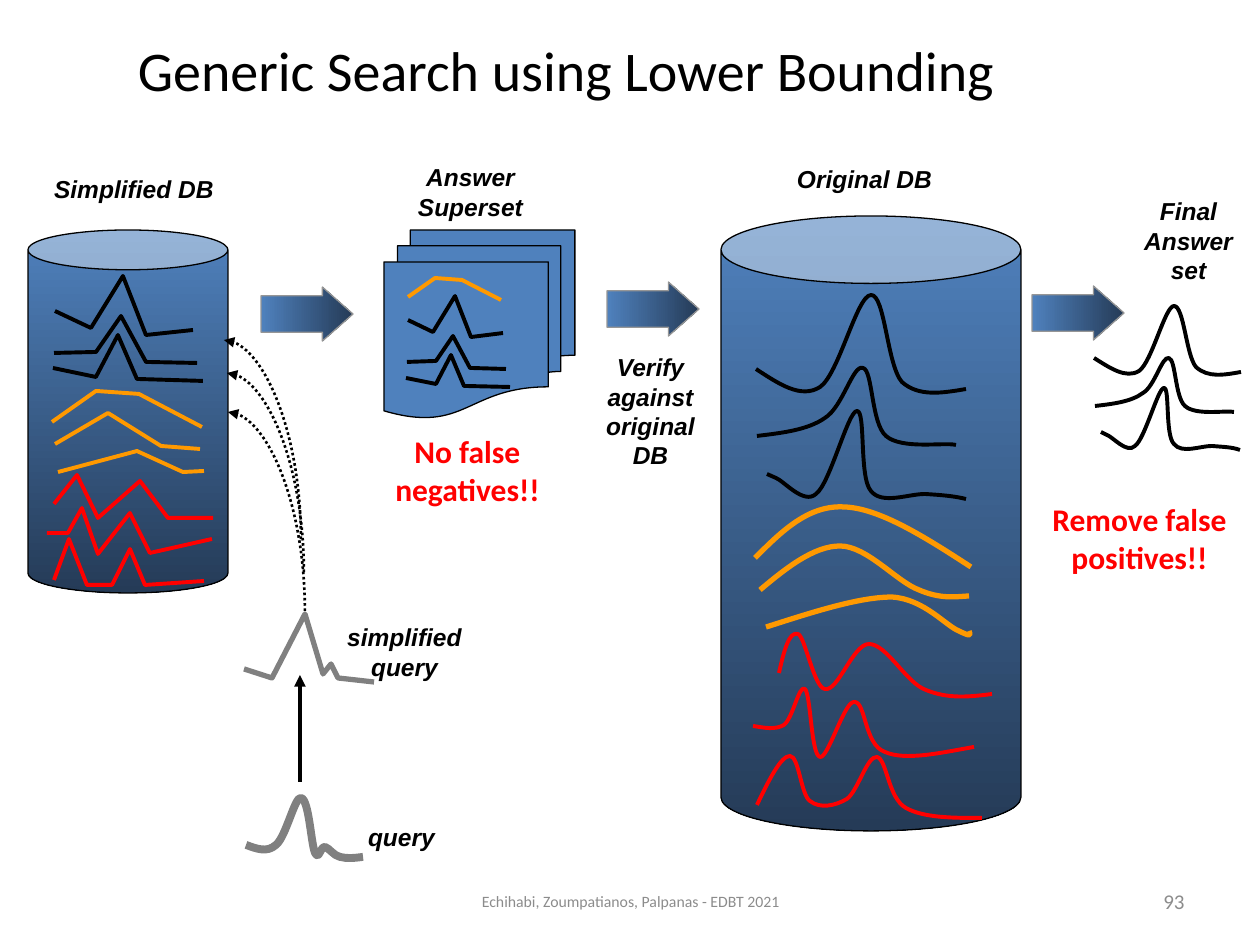
from lxml.etree import SubElement
from pptx import Presentation
from pptx.dml.color import RGBColor
from pptx.enum.dml import MSO_LINE
from pptx.enum.shapes import MSO_CONNECTOR, MSO_SHAPE
from pptx.enum.text import MSO_ANCHOR, PP_ALIGN
from pptx.oxml.ns import qn
from pptx.util import Emu, Pt

SCALE = 914400 / 126
COLORS = {"black": "000000", "red": "FF0000", "orange": "FF9900", "gray": "808080",
          "footer": "8C8C8C", "blue": "4F81BD", "navy": "253B57", "rim": "969696"}

TITLE = {"name": "Calibri", "size": Pt(32)}
LABEL = {"name": "Arial", "size": Pt(14), "bold": True, "italic": True}
REMARK = {"name": "Calibri", "size": Pt(18), "bold": True}
FOOTER = {"name": "Calibri", "size": Pt(9)}
NUMBER = {"name": "Calibri", "size": Pt(12)}

SIMPLE_BLACK = [
    [(55, 311), (91, 328), (123, 276), (146, 335), (193, 330)],
    [(54, 353), (96, 352), (121, 316), (146, 362), (197, 363)],
    [(53, 368), (96, 377), (118, 335), (137, 379), (203, 381)],
]
SIMPLE_ORANGE = [
    [(52, 422), (96, 391), (139, 394), (202, 427)],
    [(55, 444), (108, 413), (161, 446), (200, 449)],
    [(58, 472), (137, 451), (183, 472), (204, 471)],
]
SIMPLE_RED = [
    [(54, 504), (77, 475), (98, 518), (140, 481), (168, 518), (213, 518)],
    [(47, 533), (68, 533), (82, 508), (98, 554), (130, 513), (150, 553), (212, 539)],
    [(54, 580), (69, 539), (87, 585), (112, 585), (130, 549), (145, 585), (204, 581)],
]
SIMPLE_QUERY = [(244, 669), (272, 678), (305, 614), (323, 674), (331, 664), (338, 678), (374, 682)]

# Curves: a start point, then two control points and an end point per segment.
QUERY = [(246, 845), (257, 849), (267, 853), (276, 845), (286, 837), (295, 796), (301, 798),
         (309, 799), (311, 844), (315, 853), (319, 861), (320, 847), (325, 847),
         (329, 848), (334, 856), (340, 857), (347, 859), (355, 858), (363, 857)]
CURVE_BLACK = [
    [(756, 369), (779, 384), (801, 399), (820, 387), (839, 374), (857, 295), (871, 295),
     (885, 294), (887, 365), (902, 382), (919, 397), (942, 393), (966, 389)],
    [(757, 436), (782, 433), (808, 430), (825, 418), (843, 407), (853, 364), (863, 368),
     (873, 370), (871, 423), (886, 436), (902, 450), (945, 442), (956, 445)],
    [(767, 474), (767, 474), (767, 474), (776, 478), (784, 481), (804, 505), (816, 494),
     (830, 484), (848, 411), (857, 411), (866, 410), (859, 478), (871, 491),
     (882, 505), (908, 494), (925, 494), (941, 495), (954, 496), (966, 499)],
]
CURVE_ORANGE = [
    [(755, 558), (781, 532), (808, 505), (844, 507), (879, 508), (925, 537), (971, 567)],
    [(760, 590), (786, 568), (814, 546), (840, 546), (867, 546), (897, 582), (919, 590),
     (940, 599), (954, 597), (969, 596)],
    [(766, 627), (813, 612), (859, 597), (892, 597), (924, 599), (946, 626), (959, 631),
     (973, 638), (970, 634), (969, 631)],
]
CURVE_RED = [
    [(779, 673), (784, 651), (789, 631), (798, 634), (805, 636), (814, 688), (825, 689),
     (838, 692), (853, 644), (869, 644), (887, 644), (906, 683), (926, 690),
     (948, 699), (969, 697), (992, 694)],
    [(753, 726), (765, 728), (775, 730), (784, 725), (793, 718), (799, 684), (805, 689),
     (811, 696), (811, 755), (820, 757), (828, 759), (844, 702), (854, 702),
     (866, 701), (864, 745), (885, 752), (905, 761), (940, 753), (974, 747)],
    [(757, 805), (769, 780), (781, 756), (790, 756), (799, 756), (801, 795), (810, 801),
     (820, 809), (835, 806), (847, 799), (858, 791), (867, 756), (877, 757),
     (887, 759), (888, 798), (906, 808), (924, 818), (953, 818), (982, 818)],
]


def px(*lengths):
    return [Emu(round(length * SCALE)) for length in lengths]


def color(name):
    return RGBColor.from_string(COLORS[name])


def set_line(shape, name, width):
    shape.line.color.rgb = color(name)
    shape.line.width = Pt(width)


def add_text(page, text, bounds, style, name="black", align=PP_ALIGN.CENTER,
             anchor=MSO_ANCHOR.TOP):
    frame = page.shapes.add_textbox(*px(*bounds)).text_frame
    frame.word_wrap = True
    frame.vertical_anchor = anchor
    para = frame.paragraphs[0]
    para.text = text
    para.alignment = align
    for span in para.runs:
        for key, value in style.items():
            setattr(span.font, key, value)
        span.font.color.rgb = color(name)


def add_block(page, kind, bounds, line=("black", 0.75), adjustments=(), angle=None):
    """Add a preset shape, plain blue or with a blue to navy gradient at an angle."""
    block = page.shapes.add_shape(kind, *px(*bounds))
    block.shadow.inherit = False
    for index, value in enumerate(adjustments):
        block.adjustments[index] = value
    if angle is None:
        block.fill.solid()
        block.fill.fore_color.rgb = color("blue")
    else:
        block.fill.gradient()
        block.fill.gradient_angle = angle
        for stop, name in zip(block.fill.gradient_stops, ("blue", "navy")):
            stop.color.rgb = color(name)
    set_line(block, *line)


def add_series(page, points, name, width=2.25, curved=False):
    """Draw an open line; if curved, read the points as Bézier segments."""
    builder = page.shapes.build_freeform(*points[0], scale=SCALE)
    builder.add_line_segments(points[1:], close=False)
    series = builder.convert_to_shape()
    series.shadow.inherit = False
    series.fill.background()
    set_line(series, name, width)
    if curved:
        steps = series.element.xpath(".//a:lnTo")
        for index in range(0, len(steps), 3):
            first, *others = steps[index:index + 3]
            for step in others:
                first.append(step[0])
                step.getparent().remove(step)
            first.tag = qn("a:cubicBezTo")


def rescale(points, start, factor):
    """Shrink a series and move its first point to start."""
    (x0, y0), (left, top) = points[0], start
    return [(round(left + (x - x0) * factor), round(top + (y - y0) * factor)) for x, y in points]


def add_arrow(page, start, end, width):
    arrow = page.shapes.add_connector(MSO_CONNECTOR.STRAIGHT, *px(*start, *end))
    set_line(arrow, "black", width)
    SubElement(arrow.line._get_or_add_ln(), qn("a:tailEnd"), type="triangle")
    SubElement(arrow.element.spPr, qn("a:effectLst"))
    return arrow


def add_curved_arrow(page, start, end):
    """Leave start upwards and reach end leftwards: a quarter bend, turned and flipped."""
    arrow = add_arrow(page, start, end, 1.5)
    arrow.line.dash_style = MSO_LINE.ROUND_DOT
    (x1, y1), (x2, y2) = start, end
    width, height = y1 - y2, x1 - x2
    left, top = (x1 + x2 - width) / 2, (y1 + y2 - height) / 2
    arrow.left, arrow.top, arrow.width, arrow.height = px(left, top, width, height)
    frame = arrow.element.spPr.find(qn("a:xfrm"))
    for flip in ("flipH", "flipV"):
        frame.attrib.pop(flip, None)
    frame.set("rot", "5400000")
    frame.set("flipH", "1")
    arrow.element.spPr.find(qn("a:prstGeom")).set("prst", "curvedConnector2")


def main():
    deck = Presentation()
    deck.slide_width, deck.slide_height = px(1260, 945)
    page = deck.slides.add_slide(deck.slide_layouts[6])
    add_text(page, "Generic Search using Lower Bounding", (-37, 16, 1207, 106), TITLE,
             anchor=MSO_ANCHOR.MIDDLE)

    add_block(page, MSO_SHAPE.CAN, (28, 230, 200, 363), adjustments=[0.199], angle=270)
    add_block(page, MSO_SHAPE.CAN, (721, 216, 300, 615), adjustments=[0.225], angle=270)
    add_block(page, MSO_SHAPE.FLOWCHART_MULTIDOCUMENT, (384, 230, 191, 188))
    for left, top in [(261, 287), (607, 282), (1032, 286)]:
        add_block(page, MSO_SHAPE.RIGHT_ARROW, (left, top, 92, 54), ("rim", 0.75),
                  [0.674, 0.566], angle=0)

    for name, simple, curves, width in [("red", SIMPLE_RED, CURVE_RED, 2.25),
                                        ("orange", SIMPLE_ORANGE, CURVE_ORANGE, 3),
                                        ("black", SIMPLE_BLACK, CURVE_BLACK, 2.25)]:
        for points in simple:
            add_series(page, points, name)
        for points in curves:
            add_series(page, points, name, width, curved=True)
    for points, start in zip(SIMPLE_BLACK, [(408, 320), (407, 362), (406, 378)]):
        add_series(page, rescale(points, start, 0.69), "black")
    add_series(page, rescale(SIMPLE_ORANGE[0], (408, 297), 0.62), "orange")
    for points, start in zip(CURVE_BLACK, [(1094, 358), (1095, 406), (1101, 432)]):
        add_series(page, rescale(points, start, 0.7), "black", curved=True)

    add_series(page, QUERY, "gray", 4.5, curved=True)
    add_series(page, SIMPLE_QUERY, "gray", 3)
    add_arrow(page, (300, 782), (300, 675), 2.25)
    for start, end in [((305, 611), (228, 412)), ((304, 572), (227, 373)),
                       ((301, 539), (224, 340))]:
        add_curved_arrow(page, start, end)

    for text, bounds in [("query", (341, 816, 121, 42)),
                         ("simplified\vquery", (331, 616, 147, 72)),
                         ("Simplified DB", (32, 168, 204, 43)),
                         ("Original DB", (766, 158, 197, 43)),
                         ("Answer\vSuperset", (397, 156, 147, 72)),
                         ("Verify against original DB", (577, 346, 147, 130)),
                         ("Final Answer set", (1115, 190, 147, 101))]:
        add_text(page, text, bounds, LABEL)
    add_text(page, "No false negatives!!", (378, 426, 179, 89), REMARK, "red")
    add_text(page, "Remove false positives!!", (1029, 494, 221, 89), REMARK, "red")
    add_text(page, "Echihabi, Zoumpatianos, Palpanas - EDBT 2021", (431, 876, 399, 50), FOOTER,
             "footer", anchor=MSO_ANCHOR.MIDDLE)
    add_text(page, "93", (903, 876, 294, 50), NUMBER, "footer", PP_ALIGN.RIGHT,
             MSO_ANCHOR.MIDDLE)
    deck.save("out.pptx")


if __name__ == "__main__":
    main()
